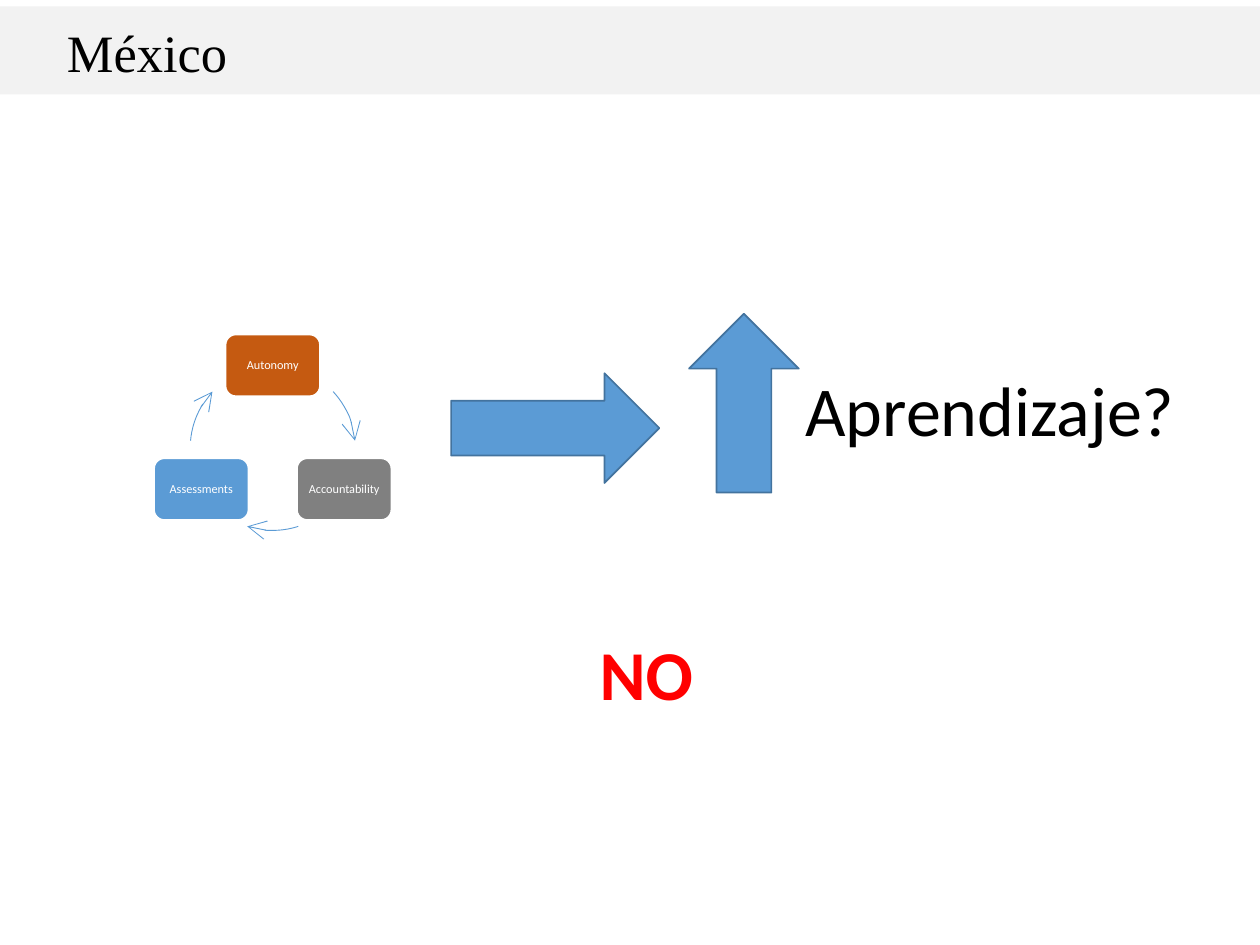
import math

from lxml import etree
from pptx import Presentation
from pptx.dml.color import RGBColor
from pptx.enum import shapes, text
from pptx.oxml import ns
from pptx.util import Pt

COLORS = {
    "band": "F2F2F2",
    "ink": "000000",
    "white": "FFFFFF",
    "blue": "5B9BD5",
    "blue_edge": "43739E",
    "orange": "C55A11",
    "gray": "808080",
    "red": "FF0000",
}
CYCLE_STEPS = [("Autonomy", "orange"), ("Accountability", "gray"), ("Assessments", "blue")]
ARC_SPANS = [(317, 355), (72, 108), (185, 223)]


def rgb(name):
    return RGBColor.from_string(COLORS[name])


def write(paragraph, words, size=40, font="Calibri", color="ink", bold=False,
          align=text.PP_ALIGN.LEFT, before=0, spacing=1.0):
    paragraph.alignment = align
    paragraph.space_before = Pt(before)
    paragraph.line_spacing = spacing
    run = paragraph.add_run()
    run.text = words
    run.font.size = Pt(size)
    run.font.name = font
    run.font.bold = bold
    run.font.color.rgb = rgb(color)


def set_frame(frame, left=7.2, top=3.6, right=7.2, bottom=3.6, anchor=text.MSO_ANCHOR.TOP):
    frame.word_wrap = True
    frame.auto_size = text.MSO_AUTO_SIZE.NONE
    frame.vertical_anchor = anchor
    frame.margin_left, frame.margin_top = Pt(left), Pt(top)
    frame.margin_right, frame.margin_bottom = Pt(right), Pt(bottom)


def add_figure(slide, kind, box, fill=None, line=None, weight=1):
    figure = slide.shapes.add_shape(kind, *map(Pt, box))
    figure.shadow.inherit = False
    if fill:
        figure.fill.solid()
        figure.fill.fore_color.rgb = rgb(fill)
    else:
        figure.fill.background()
    if line:
        figure.line.color.rgb = rgb(line)
        figure.line.width = Pt(weight)
    else:
        figure.line.fill.background()
    return figure


def add_header(slide, box):
    left, top, width, height = box
    band = add_figure(slide, shapes.MSO_SHAPE.RECTANGLE, box, fill="band")
    title = slide.shapes.title
    title._element.addprevious(band._element)
    title.left, title.top = Pt(left + 31), Pt(top + 0.7)
    title.width, title.height = Pt(538.5), Pt(44)
    set_frame(title.text_frame, top=7.3, bottom=0)
    write(title.text_frame.paragraphs[0], "México", size=30, font="Times New Roman")


def add_cycle(slide, box):
    left, top, diameter = box
    radius = diameter / 2
    node_width, node_height = 54, 35.3
    for index, (label, fill) in enumerate(CYCLE_STEPS):
        angle = math.radians(-90 + index * 360 / len(CYCLE_STEPS))
        center_x = left + radius * (1 + math.cos(angle))
        center_y = top + radius * (1 + math.sin(angle))
        node = add_figure(
            slide, shapes.MSO_SHAPE.ROUNDED_RECTANGLE,
            (center_x - node_width / 2, center_y - node_height / 2, node_width, node_height),
            fill=fill, line="white")
        set_frame(node.text_frame, 2, 2, 2, 2, anchor=text.MSO_ANCHOR.MIDDLE)
        write(node.text_frame.paragraphs[0], label, size=7, color="white",
              align=text.PP_ALIGN.CENTER, spacing=0.9)
    for start, end in ARC_SPANS:
        arc = add_figure(slide, shapes.MSO_SHAPE.ARC, (left, top, diameter, diameter),
                         line="blue", weight=0.5)
        arc.adjustments[0] = start * 0.6
        arc.adjustments[1] = end * 0.6
        etree.SubElement(arc.line._get_or_add_ln(), ns.qn("a:tailEnd"),
                         type="arrow", w="lg", len="lg")


def add_arrows(slide, box):
    left, top, width, height = box
    thickness = 62.7
    add_figure(slide, shapes.MSO_SHAPE.RIGHT_ARROW, (left, top + 34, 119, thickness),
               fill="blue", line="blue_edge")
    add_figure(slide, shapes.MSO_SHAPE.UP_ARROW,
               (left + width - thickness, top, thickness, height),
               fill="blue", line="blue_edge")


def add_answer(slide, box):
    answer = slide.shapes.add_textbox(*map(Pt, box)).text_frame
    set_frame(answer, top=83.3)
    question = answer.paragraphs[0]
    write(question, "Aprendizaje?")
    question._p.get_or_add_pPr().set("marL", str(Pt(405)))
    write(answer.add_paragraph(), "NO", color="red", bold=True,
          align=text.PP_ALIGN.CENTER, before=103)


def main():
    deck = Presentation()
    deck.slide_width, deck.slide_height = Pt(720), Pt(540)
    slide = deck.slides.add_slide(deck.slide_layouts[5])
    add_header(slide, (0, 3.6, 720, 50.4))
    add_answer(slide, (48.2, 126, 642.2, 354.2))
    add_cycle(slide, (108.7, 208.8, 94.3))
    add_arrows(slide, (257.8, 179.3, 198.7, 102.2))
    deck.save("out.pptx")


if __name__ == "__main__":
    main()
